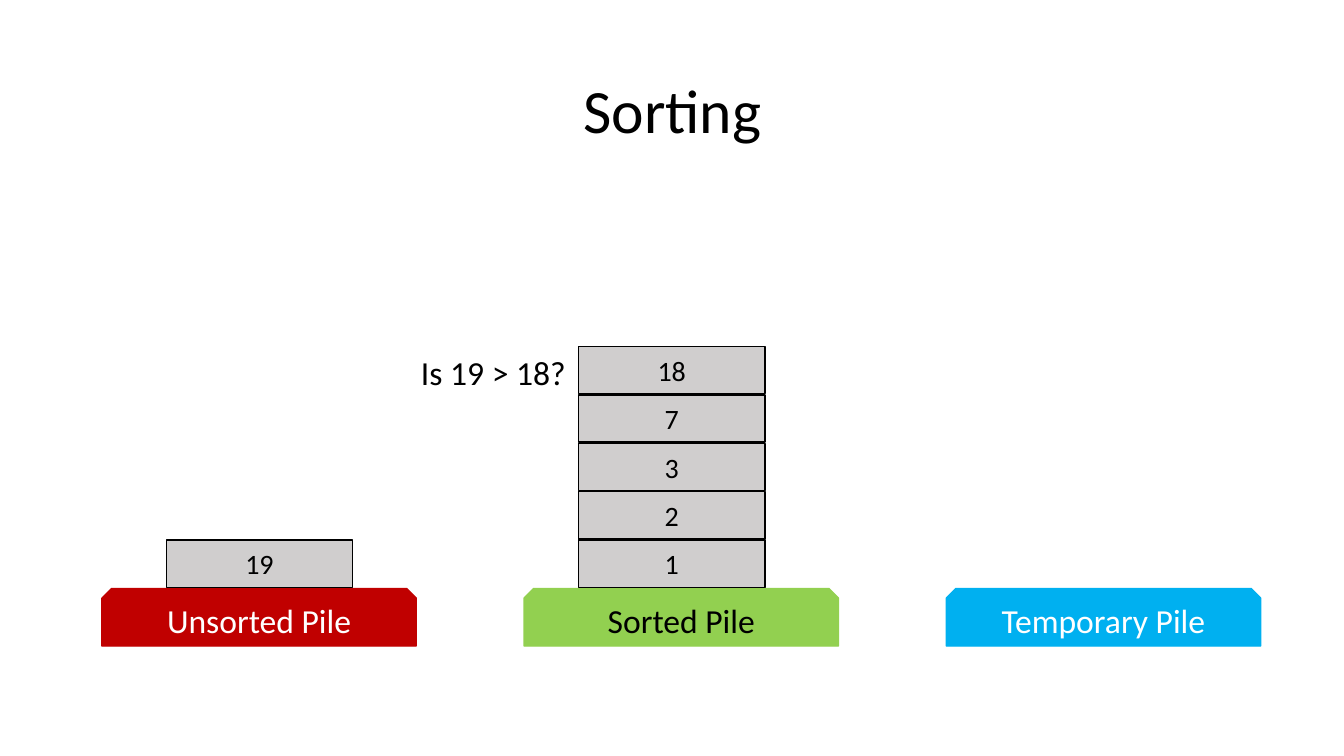
from pptx import Presentation
from pptx.dml.color import RGBColor
from pptx.enum.shapes import MSO_SHAPE
from pptx.enum.text import MSO_ANCHOR, MSO_AUTO_SIZE, PP_ALIGN
from pptx.util import Cm, Pt

SNIPPED, RECTANGLE = MSO_SHAPE.SNIP_2_SAME_RECTANGLE, MSO_SHAPE.RECTANGLE
MIDDLE = MSO_ANCHOR.MIDDLE
CENTER, LEFT = PP_ALIGN.CENTER, PP_ALIGN.LEFT
GROW = MSO_AUTO_SIZE.SHAPE_TO_FIT_TEXT
TITLE_ONLY = 5

BLACK, WHITE, CARD_GREY = "000000", "FFFFFF", "D0CECE"
PILE_TOP, PILE_LEFT, PILE_STEP = 14.83, 2.57, 10.64
CARD_TOP, CARD_STEP = 13.61, 1.22


def write(holder, text, size, color, align=CENTER):
    holder.text_frame.text = text
    paragraph = holder.text_frame.paragraphs[0]
    paragraph.alignment = align
    paragraph.font.name = "Calibri"
    paragraph.font.size = Pt(size)
    paragraph.font.color.rgb = RGBColor.from_string(color)
    return paragraph


def add_block(outline, left, top, width, height, fill, line, text, size, color):
    block = slide.shapes.add_shape(outline, Cm(left), Cm(top), Cm(width), Cm(height))
    block.shadow.inherit = False
    block.fill.solid()
    block.fill.fore_color.rgb = RGBColor.from_string(fill)
    block.line.color.rgb = RGBColor.from_string(line)
    block.line.width = Pt(1)
    block.text_frame.vertical_anchor = MIDDLE
    write(block, text, size, color)


deck = Presentation()
deck.slide_width, deck.slide_height = Cm(33.87), Cm(19.05)
slide = deck.slides.add_slide(deck.slide_layouts[TITLE_ONLY])

title = slide.shapes.title
title.left, title.top, title.width, title.height = Cm(2.34), Cm(1.02), Cm(29.21), Cm(3.68)
title.text_frame.vertical_anchor = MIDDLE
write(title, "Sorting", 44, BLACK).line_spacing = 0.9

piles = [
    ("Unsorted Pile", "C00000", WHITE),
    ("Sorted Pile", "92D050", BLACK),
    ("Temporary Pile", "00B0F0", WHITE),
]
for position, (label, fill, color) in enumerate(piles):
    add_block(SNIPPED, PILE_LEFT + position * PILE_STEP, PILE_TOP, 7.92, 1.45,
              fill, fill, label, 24, color)

stacks = [(4.19, [19]), (14.58, [1, 2, 3, 7, 18])]
for left, cards in stacks:
    for level, card in enumerate(cards):
        add_block(RECTANGLE, left, CARD_TOP - level * CARD_STEP, 4.7, 1.19,
                  CARD_GREY, BLACK, str(card), 20, BLACK)

question = slide.shapes.add_textbox(Cm(10.36), Cm(8.74), Cm(4.19), Cm(1.27))
question.text_frame.word_wrap = False
question.text_frame.auto_size = GROW
write(question, "Is 19 > 18?", 24, BLACK, LEFT)

deck.save("out.pptx")
